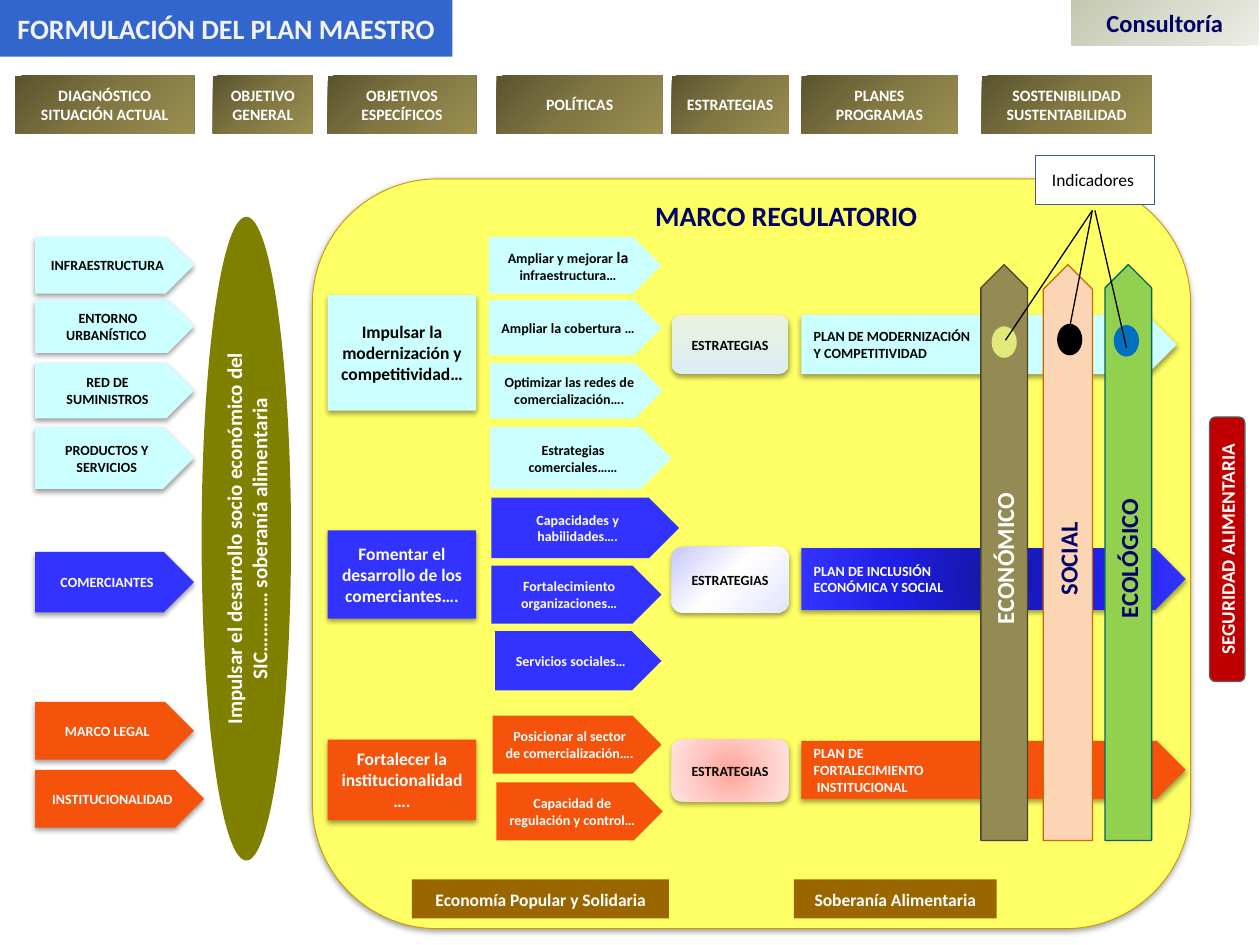
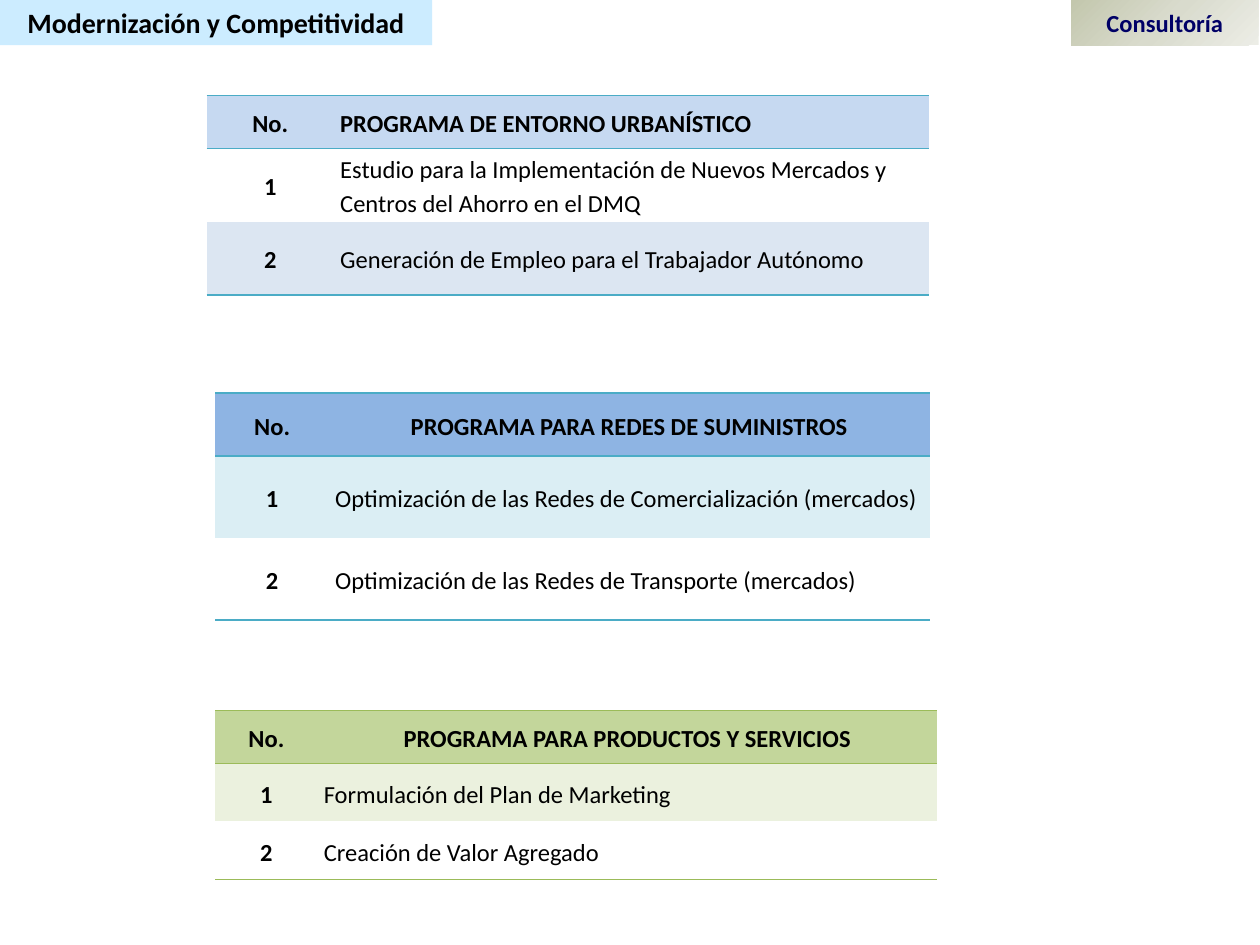
"""Build the two slides of the master plan presentation."""
from dataclasses import dataclass

from lxml import etree
from pptx import Presentation
from pptx import util as u
from pptx.dml.color import RGBColor
from pptx.enum import shapes, text
from pptx.oxml.ns import qn

RECT = shapes.MSO_SHAPE.RECTANGLE
ROUND = shapes.MSO_SHAPE.ROUNDED_RECTANGLE
ARROW = shapes.MSO_SHAPE.PENTAGON
OVAL = shapes.MSO_SHAPE.OVAL
LEFT, CENTER = text.PP_ALIGN.LEFT, text.PP_ALIGN.CENTER


@dataclass(frozen=True)
class Gradient:
    """Colour stops with either a linear angle or a circle's inner rectangle."""
    stops: tuple
    angle: int = 0
    circle: tuple = ()


@dataclass(frozen=True)
class Theme:
    """Colours, type sizes and grid shared by the slides."""
    columns: int = 100
    rows: int = 75
    font: str = "Calibri"
    title_size: int = 16
    brand_size: int = 14
    label_size: int = 10
    header_size: int = 9
    small_size: int = 8
    black: str = "000000"
    white: str = "FFFFFF"
    navy: str = "000066"
    cyan: str = "CCFFFF"
    blue: str = "3333FF"
    orange: str = "F5530B"
    brown: str = "996600"
    teal: str = "4BACC6"
    green: str = "9BBB59"
    olive: Gradient = Gradient(((0, "5A542F"), (50, "817743"), (100, "998D4F")), 45)
    brand: Gradient = Gradient(((0, "C3C7AD"), (50, "D9DBCD"), (100, "ECEDE6")),
                               circle=(0, 0, 100, 100))
    mist: Gradient = Gradient(((0, "DBEEF4"), (100, "EBF1DE")), 270)
    lilac: Gradient = Gradient(((0, "C7C7FF"), (48, "FFFFFF"), (100, "E4E4FF")), 45)
    rose: Gradient = Gradient(((0, "FFA499"), (50, "FFC7C1"), (100, "FFE3E1")),
                              circle=(50, 50, 50, 50))
    deep_blue: Gradient = Gradient(((0, "1515A0"), (50, "1E1EE4"), (100, "3333FF")),
                                   circle=(50, 50, 50, 50))


THEME = Theme()
WIDTH, HEIGHT = u.Inches(10), u.Inches(7.5)


def across(columns):
    """Turn grid columns into a length."""
    return int(WIDTH * columns / THEME.columns)


def down(rows):
    """Turn grid rows into a length."""
    return int(HEIGHT * rows / THEME.rows)


def place(area):
    """Turn a grid area (column, row, columns, rows) into lengths."""
    return across(area[0]), down(area[1]), across(area[2]), down(area[3])


def element(parent, tag, **attributes):
    """Append a drawing element with its attributes."""
    values = {name: str(value) for name, value in attributes.items()}
    return etree.SubElement(parent, qn(f"a:{tag}"), values)


def paint(shape, fill):
    """Fill a shape with a colour or a gradient."""
    if isinstance(fill, str):
        shape.fill.solid()
        shape.fill.fore_color.rgb = RGBColor.from_string(fill)
        return
    shape.fill.gradient()
    gradient = shape._element.spPr.find(qn("a:gradFill"))
    for child in list(gradient):
        gradient.remove(child)
    stops = element(gradient, "gsLst")
    for position, color in fill.stops:
        element(element(stops, "gs", pos=position * 1000), "srgbClr", val=color)
    if fill.circle:
        sides = {side: share * 1000 for side, share in zip("ltrb", fill.circle)}
        element(element(gradient, "path", path="circle"), "fillToRect", **sides)
    else:
        element(gradient, "lin", ang=fill.angle * 60000, scaled=0)


def cast_shadow(shape):
    """Give a shape a soft shadow below it."""
    effects = shape._element.spPr.find(qn("a:effectLst"))
    outer = element(effects, "outerShdw", blurRad=u.Pt(3.1), dist=u.Pt(1.6),
                    dir=90 * 60000, rotWithShape=0)
    element(element(outer, "srgbClr", val=THEME.black), "alpha", val=38000)


def style_run(run, size, color, bold=True):
    """Set the font of one run."""
    run.font.name, run.font.size, run.font.bold = THEME.font, u.Pt(size), bold
    run.font.color.rgb = RGBColor.from_string(color)


def write(frame, label, size, color, bold=True, align=CENTER):
    """Put a label in a text frame, one paragraph a line."""
    frame.text = label
    for paragraph in frame.paragraphs:
        paragraph.alignment = align
        for run in paragraph.runs:
            style_run(run, size, color, bold)


def box(slide, kind, area, fill, label="", size=THEME.small_size, color=THEME.white,
        bold=True, align=CENTER, line=None, shadow=False, vertical=False):
    """Draw a preset shape with an optional label, outline and shadow."""
    shape = slide.shapes.add_shape(kind, *place(area))
    shape.shadow.inherit = False
    paint(shape, fill)
    if line:
        shape.line.color.rgb = RGBColor.from_string(line[0])
        shape.line.width = u.Pt(line[1])
    else:
        shape.line.fill.background()
    if shadow:
        cast_shadow(shape)
    if label:
        frame = shape.text_frame
        frame.word_wrap = True
        frame.vertical_anchor = text.MSO_ANCHOR.MIDDLE
        write(frame, label, size, color, bold, align)
        if vertical:
            frame._txBody.bodyPr.set("vert", "vert270")
    return shape


def ink(fill):
    """Choose the text colour that reads on a fill."""
    return THEME.black if fill == THEME.cyan else THEME.white


def title_band(slide, label, columns, rows, fill, color):
    """Draw the title band and the consultancy tag."""
    box(slide, RECT, (0, 0, columns, rows), fill, label, THEME.title_size, color)
    box(slide, RECT, (85, 0, 14.9, 3.6), THEME.brand, "Consultoría", THEME.brand_size, THEME.navy)


def pillar(slide, center, thickness, label, fill, color, outline):
    """Draw an upward arrow with its label reading upwards."""
    length, middle = 45.7, 43.85
    area = (center - length / 2, middle - thickness / 2, length, thickness)
    shape = box(slide, ARROW, area, fill, label, THEME.brand_size, color, line=(outline, 0.75))
    shape.rotation = 270


def pointer(slide, start, end):
    """Draw a thin straight line between two grid points."""
    line = slide.shapes.add_connector(
        shapes.MSO_CONNECTOR.STRAIGHT, across(start[0]), down(start[1]),
        across(end[0]), down(end[1]))
    line.line.color.rgb = RGBColor.from_string(THEME.black)
    line.line.width = u.Pt(0.75)
    element(line._element.spPr, "effectLst")


def border(cell, side, color):
    """Draw or clear one border of a cell."""
    line = element(cell._tc.get_or_add_tcPr(), f"ln{side}", w=u.Pt(1))
    if color:
        element(element(line, "solidFill"), "srgbClr", val=color)
    else:
        element(line, "noFill")


def program_table(slide, corner, columns, rows, accent, fills, entries, header_align=CENTER):
    """Draw a numbered table of programmes with rules above and below."""
    area = (*corner, sum(columns), sum(rows))
    table = slide.shapes.add_table(len(rows), len(columns), *place(area)).table
    table.first_row = table.horz_banding = False
    for column, width in zip(table.columns, columns):
        column.width = across(width)
    edges = (accent, accent, None, accent)
    for index, (height, fill, entry) in enumerate(zip(rows, fills, entries)):
        table.rows[index].height = down(height)
        for position, label in enumerate((str(index) if index else "No.", entry)):
            cell = table.cell(index, position)
            for side, color in zip("LRTB", (None, None, edges[index], edges[index + 1])):
                border(cell, side, color)
            cell.fill.solid()
            cell.fill.fore_color.rgb = RGBColor.from_string(fill)
            cell.margin_left = cell.margin_right = across(0.5)
            cell.margin_top = cell.margin_bottom = 0
            cell.vertical_anchor = text.MSO_ANCHOR.MIDDLE
            align = CENTER if position == 0 else LEFT if index else header_align
            write(cell.text_frame, label, THEME.brand_size, THEME.black,
                  index == 0 or position == 0, align)
            cell.text_frame.paragraphs[0].line_spacing = 1.15


def stage_headers(slide):
    """Draw the row of planning stages."""
    for left, width, label in (
            (1.2, 14.2, "DIAGNÓSTICO\nSITUACIÓN ACTUAL"), (16.9, 7.9, "OBJETIVO GENERAL"),
            (26, 11.8, "OBJETIVOS ESPECÍFICOS"), (39.4, 13.2, "POLÍTICAS"),
            (53.3, 9.3, "ESTRATEGIAS"), (63.6, 12.4, "PLANES PROGRAMAS"),
            (77.9, 13.5, "SOSTENIBILIDAD SUSTENTABILIDAD")):
        box(slide, RECT, (left, 6, width, 4.6), THEME.olive, label, THEME.header_size)


def diagnosis(slide):
    """Draw the current situation and the general objective."""
    for top, width, height, fill, label in (
            (18.8, 12.6, 4.5, THEME.cyan, "INFRAESTRUCTURA"),
            (23.8, 12.6, 4.2, THEME.cyan, "ENTORNO URBANÍSTICO "),
            (28.8, 12.6, 4.4, THEME.cyan, "RED DE SUMINISTROS"),
            (33.9, 12.6, 4.9, THEME.cyan, "PRODUCTOS Y SERVICIOS"),
            (43.8, 12.6, 4.8, THEME.blue, "COMERCIANTES"),
            (55.7, 12.6, 4.6, THEME.orange, "MARCO LEGAL"),
            (61.1, 13.4, 4.6, THEME.orange, "INSTITUCIONALIDAD")):
        box(slide, ARROW, (2.8, top, width, height), fill, label, color=ink(fill), shadow=True)
    box(slide, OVAL, (16, 17.2, 7.1, 51.1), "808000",
        "Impulsar el desarrollo socio económico del SIC………… soberanía alimentaria",
        12, vertical=True)


def objectives(slide):
    """Draw the specific objectives."""
    for top, height, fill, label in (
            (23.4, 9.2, THEME.cyan, "Impulsar la modernización y competitividad…"),
            (42.1, 7, THEME.blue, "Fomentar el desarrollo de los comerciantes…."),
            (58.7, 6.4, THEME.orange, "Fortalecer la institucionalidad….")):
        box(slide, RECT, (26, top, 11.8, height), fill, label, THEME.label_size,
            ink(fill), shadow=True)


def policies(slide):
    """Draw the policies that serve each objective."""
    infrastructure = box(slide, ARROW, (38.8, 18.8, 13.7, 4.5), THEME.cyan,
                         "Ampliar y mejorar ", color=THEME.black)
    for words, size in (("la", THEME.header_size), (" infraestructura…", THEME.small_size)):
        run = infrastructure.text_frame.paragraphs[0].add_run()
        run.text = words
        style_run(run, size, THEME.black)
    for area, fill, label in (
            ((38.8, 23.8, 13.7, 4.4), THEME.cyan, "Ampliar la cobertura …"),
            ((38.9, 28.8, 13.7, 4.4), THEME.cyan, "Optimizar las redes de comercialización…."),
            ((38.9, 33.9, 14.4, 4.9), THEME.cyan, "Estrategias comerciales……"),
            ((39, 39.5, 14.9, 4.8), THEME.blue, "Capacidades y habilidades…."),
            ((39, 44.9, 13.5, 4.6), THEME.blue, "Fortalecimiento organizaciones…"),
            ((39.3, 50.1, 13.2, 4.7), THEME.blue, "Servicios sociales…"),
            ((39.1, 56.8, 13.4, 4.6), THEME.orange, "Posicionar al sector de comercialización…."),
            ((39.4, 62.1, 13.2, 4.6), THEME.orange, "Capacidad de regulación y control…")):
        box(slide, ARROW, area, fill, label, color=ink(fill))


def strategies_and_plans(slide):
    """Draw each strategy and the plan it leads to."""
    for top, height, fill in ((25, 4.7, THEME.mist), (43.4, 5.2, THEME.lilac),
                              (58.7, 4.9, THEME.rose)):
        box(slide, ROUND, (53.3, top, 9.3, height), fill, "ESTRATEGIAS",
            color=THEME.black, shadow=True)
    for top, width, height, fill, label in (
            (25, 29.8, 4.7, THEME.cyan, "PLAN DE MODERNIZACIÓN\nY COMPETITIVIDAD"),
            (43.5, 30.5, 4.9, THEME.deep_blue, "PLAN DE INCLUSIÓN\nECONÓMICA Y SOCIAL"),
            (58.8, 30.5, 4.6, THEME.orange, "PLAN DE\nFORTALECIMIENTO\n INSTITUCIONAL")):
        box(slide, ARROW, (63.6, top, width, height), fill, label,
            color=ink(fill), align=LEFT, shadow=True)


def sustainability(slide):
    """Draw the pillars, their indicators and the closing goal."""
    pillar(slide, 79.7, 3.7, "ECONÓMICO", "948A54", THEME.white, "4A452A")
    pillar(slide, 84.75, 3.9, "SOCIAL", "FCD5B5", THEME.navy, "CC6600")
    pillar(slide, 89.55, 3.7, "ECOLÓGICO", "92D050", THEME.navy, "006666")
    box(slide, ROUND, (96, 33.1, 2.8, 21), "C00000", "SEGURIDAD ALIMENTARIA", 11,
        line=("5F5F5F", 0.75), vertical=True)
    box(slide, RECT, (82.2, 12.3, 9.4, 3.9), THEME.white, "Indicadores ",
        THEME.label_size, THEME.black, bold=False, line=("3A5F8C", 0.5))
    for left, top, fill, tip, source in (
            (78.7, 25.9, "E1E97B", (79.8, 27), 86.7),
            (83.9, 25.7, THEME.black, (84.7, 27), 86.7),
            (88.4, 25.8, "0070C0", (89.4, 27.6), 86.9)):
        box(slide, OVAL, (left, top, 2, 2.5), fill)
        pointer(slide, tip, (source, 16.7))


def master_plan(slide):
    """Compose the master plan diagram."""
    title_band(slide, "FORMULACIÓN DEL PLAN MAESTRO", 35.9, 4.5, "3366CC", "F2F2F2")
    stage_headers(slide)
    box(slide, ROUND, (24.8, 14.2, 69.7, 59.5), "FFFF66", line=("CC9900", 0.5), shadow=True)
    heading = slide.shapes.add_textbox(*place((48.8, 15.3, 27.2, 3.7))).text_frame
    heading.word_wrap = True
    write(heading, "MARCO REGULATORIO", THEME.title_size, THEME.navy)
    for draw in (diagnosis, objectives, policies, strategies_and_plans, sustainability):
        draw(slide)
    for left, width, label in ((32.7, 20.4, "Economía Popular y Solidaria"),
                               (63, 16.1, "Soberanía Alimentaria")):
        box(slide, RECT, (left, 69.8, width, 3.1), THEME.brown, label, THEME.label_size)


def modernization(slide):
    """Compose the programme tables."""
    title_band(slide, "Modernización y Competitividad", 34.3, 3.6, "CCECFF", THEME.black)
    program_table(slide, (16.4, 7.6), (10.1, 47.2), (4.2, 5.8, 5.8), THEME.teal,
                  ("C6D9F1", THEME.white, "DCE6F2"),
                  ("PROGRAMA DE ENTORNO URBANÍSTICO",
                   "Estudio para la Implementación de Nuevos Mercados y Centros del Ahorro en el DMQ",
                   "Generación de Empleo para el Trabajador Autónomo"), LEFT)
    program_table(slide, (17.1, 31.2), (9, 47.7), (5, 6.5, 6.5), THEME.teal,
                  ("8EB4E3", "DBEEF4", THEME.white),
                  ("PROGRAMA PARA REDES DE SUMINISTROS",
                   "Optimización de las Redes de Comercialización (mercados)",
                   "Optimización de las Redes de Transporte (mercados)"))
    program_table(slide, (17.1, 56.4), (8.1, 49.2), (4.2, 4.6, 4.6), THEME.green,
                  ("C3D69B", "EBF1DE", THEME.white),
                  ("PROGRAMA PARA PRODUCTOS Y SERVICIOS",
                   "Formulación del Plan de Marketing", "Creación de Valor Agregado"))


def main():
    """Build and save the presentation."""
    presentation = Presentation()
    presentation.slide_width, presentation.slide_height = WIDTH, HEIGHT
    for compose in (master_plan, modernization):
        compose(presentation.slides.add_slide(presentation.slide_layouts[6]))
    presentation.save("out.pptx")


if __name__ == "__main__":
    main()
